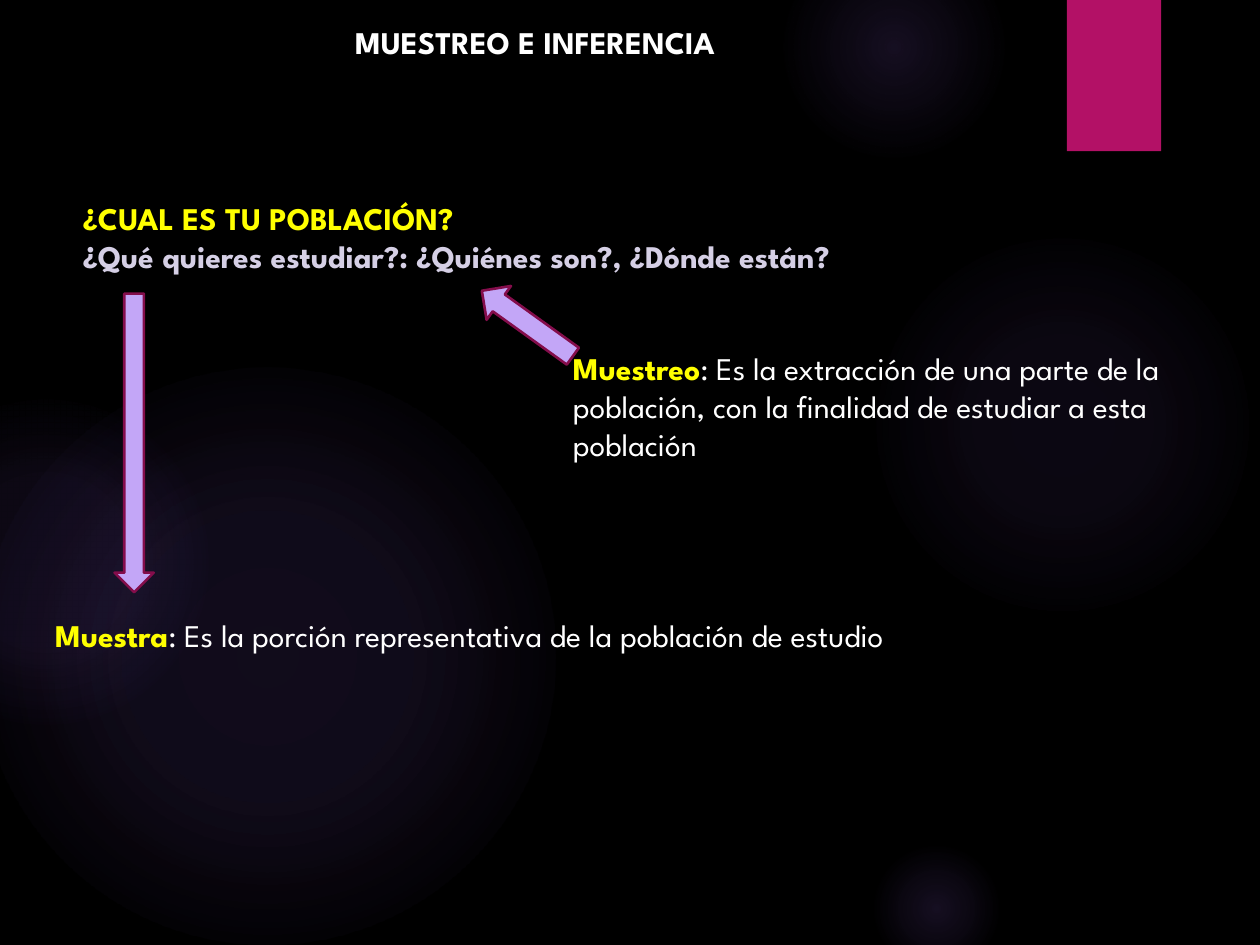
"""Build the slide on sampling and inference."""
from lxml import etree
from pptx import Presentation
from pptx.dml.color import RGBColor as RGB
from pptx.enum.shapes import MSO_SHAPE as Form
from pptx.enum.text import MSO_AUTO_SIZE as AutoSize
from pptx.oxml.ns import nsdecls, qn
from pptx.util import Cm, Pt

COLORS = {
    "night": "000000", "glow": "9B6BF2", "ribbon": "B31166",
    "arrow": "C3A6F7", "edge": "840D4B",
    "key": "FFFF00", "body": "FFFFFF", "question": "D5CFE5",
}
FONT = {"name": "League Spartan", "size": Pt(18)}

deck = Presentation()
deck.slide_width, deck.slide_height = Cm(25.4), Cm(19.05)
slide = deck.slides.add_slide(deck.slide_layouts[6])
slide.background.fill.solid()
slide.background.fill.fore_color.rgb = RGB.from_string(COLORS["night"])


def add_form(form, box, color):
    shape = slide.shapes.add_shape(form, *map(Cm, box))
    shape.shadow.inherit = False
    shape.fill.solid()
    shape.fill.fore_color.rgb = RGB.from_string(COLORS[color])
    shape.line.fill.background()
    return shape


def add_text(box, paragraphs, wrap=True):
    frame = slide.shapes.add_textbox(*map(Cm, box)).text_frame
    frame.word_wrap = wrap
    frame.auto_size = AutoSize.SHAPE_TO_FIT_TEXT
    for index, pieces in enumerate(paragraphs):
        paragraph = frame.add_paragraph() if index else frame.paragraphs[0]
        for text, color, bold in pieces:
            run = paragraph.add_run()
            run.text = text
            for attribute, value in {**FONT, "bold": bold}.items():
                setattr(run.font, attribute, value)
            run.font.color.rgb = RGB.from_string(COLORS[color])


glows = [
    (17.5, 4.65, 7.82, [(0, 7), (36, 6), (69, 0)]),
    (15.8, -1.27, 4.45, [(0, 14), (36, 7), (73, 0)]),
    (17.5, 16.94, 2.74, [(0, 14), (36, 7), (66, 0)]),
    (-0.43, 7.42, 11.63, [(0, 11), (36, 10), (75, 0)]),
    (-2.34, 8.05, 6.55, [(0, 8), (36, 8), (72, 0)]),
]
for left, top, diameter, stops in glows:
    glow = add_form(Form.OVAL, (left, top, diameter, diameter), "glow")
    stop_xml = "".join(
        f'<a:gs pos="{position * 1000}"><a:srgbClr val="{COLORS["glow"]}">'
        f'<a:alpha val="{opacity * 1000}"/></a:srgbClr></a:gs>'
        for position, opacity in stops
    )
    gradient = etree.fromstring(
        f'<a:gradFill {nsdecls("a")}><a:gsLst>{stop_xml}</a:gsLst>'
        '<a:path path="circle"><a:fillToRect l="50000" t="50000" '
        'r="50000" b="50000"/></a:path></a:gradFill>'
    )
    properties = glow.element.spPr
    properties.replace(properties.find(qn("a:solidFill")), gradient)

add_form(Form.RECTANGLE, (21.51, 0, 1.9, 3.05), "ribbon")

add_text((6.91, 0.33, 8.08, 1.02), [[("MUESTREO E INFERENCIA", "body", True)]], wrap=False)
add_text((11.3, 6.91, 13.26, 2.57), [[
    ("Muestreo", "key", True),
    (": Es la extracción de una parte de la población, "
     "con la finalidad de estudiar a esta población", "body", False),
]])
add_text((1.42, 3.89, 20.68, 1.8), [
    [("¿CUAL ES TU POBLACIÓN?", "key", True)],
    [("¿Qué quieres estudiar?: ¿Quiénes son?, ¿Dónde están?", "question", True)],
])
add_text((0.86, 12.29, 20.85, 1.02), [[
    ("Muestra", "key", True),
    (": Es la porción representativa de la población de estudio", "body", False),
]])

arrows = [
    (Form.RIGHT_ARROW, (9.5, 6.1, 2.26, 0.84), 215.7),
    (Form.DOWN_ARROW, (2.31, 5.92, 0.79, 6.02), 0),
]
for form, box, angle in arrows:
    arrow = add_form(form, box, "arrow")
    arrow.rotation = angle
    arrow.line.color.rgb = RGB.from_string(COLORS["edge"])
    arrow.line.width = Pt(1.5)

deck.save("out.pptx")
